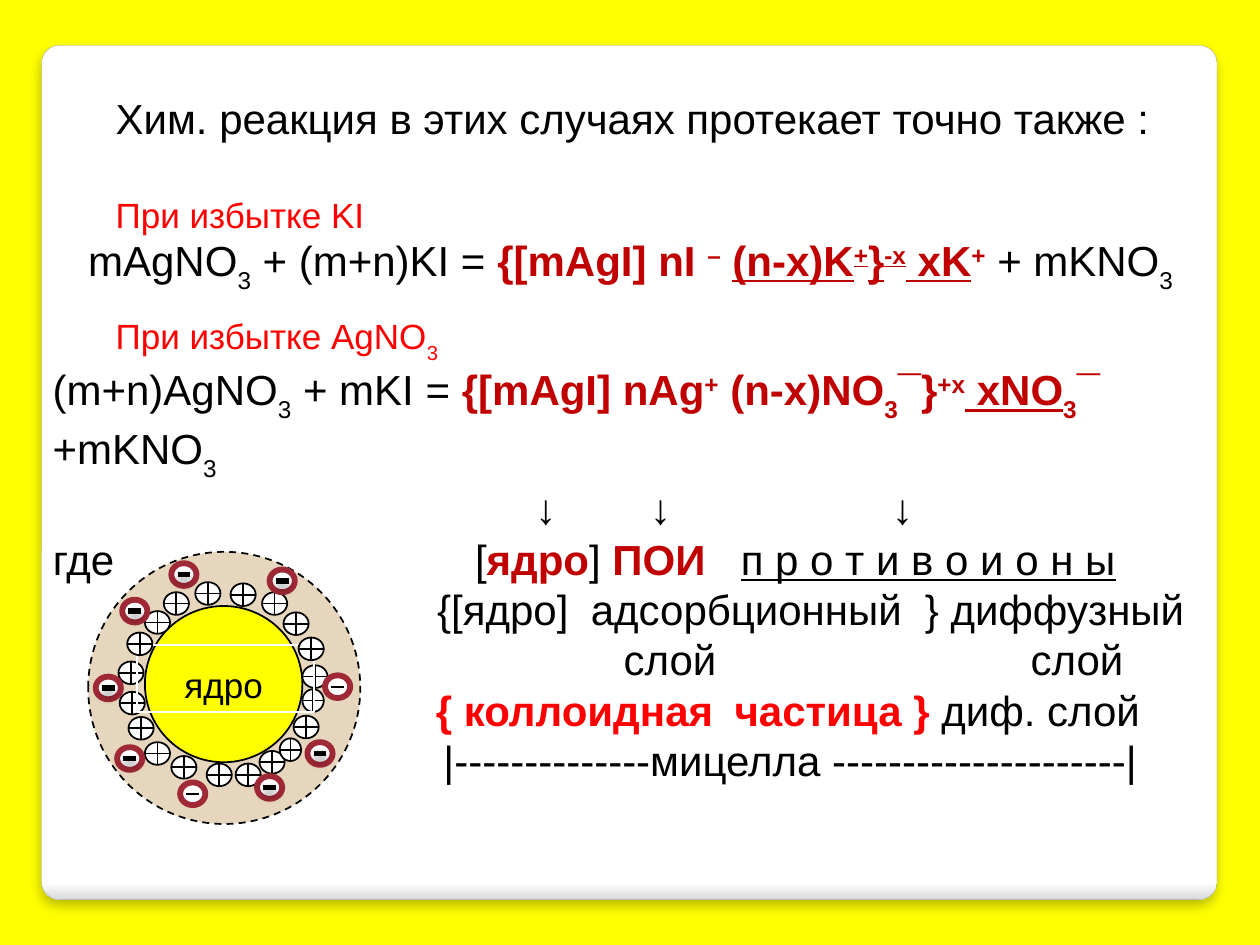
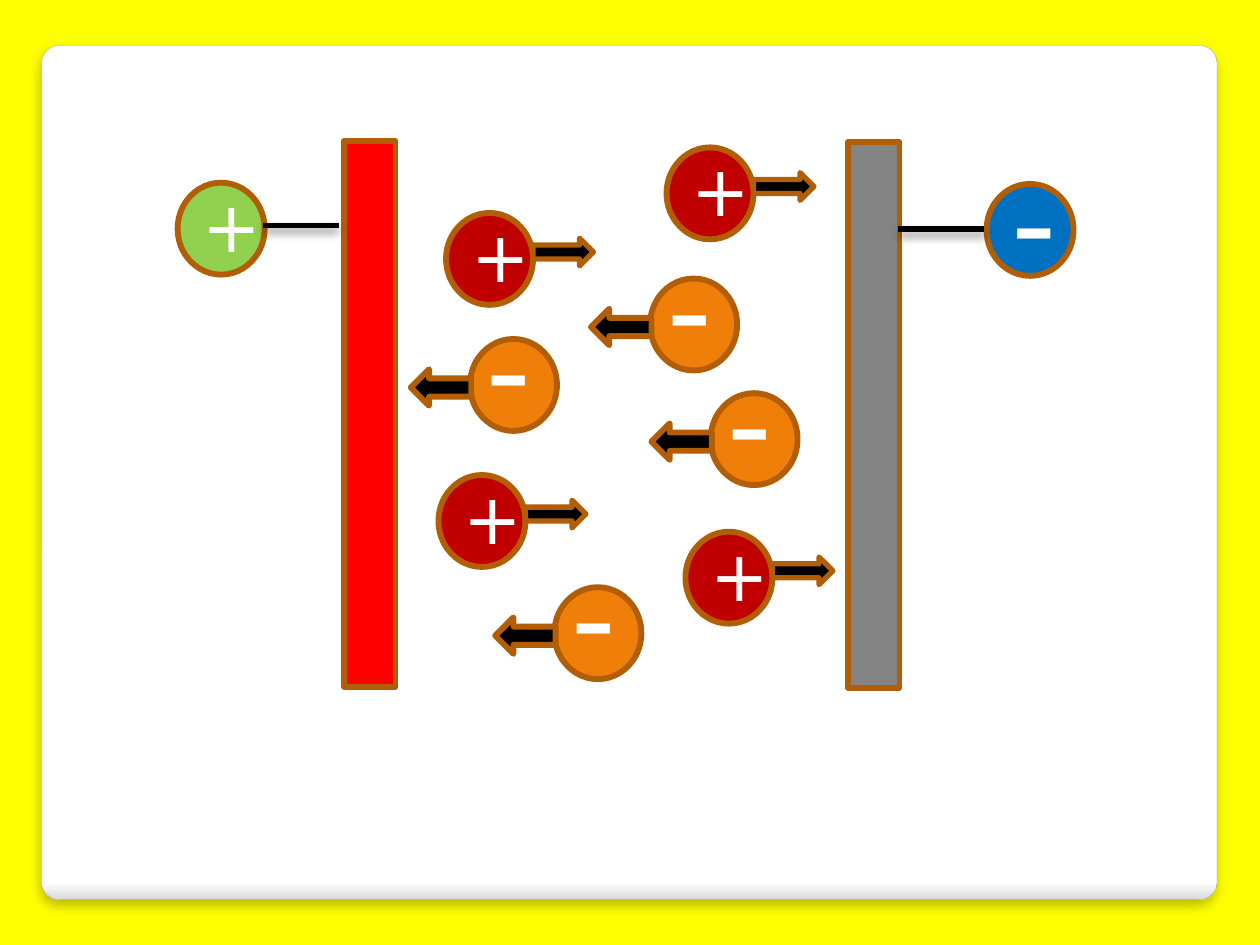
from lxml import etree
from pptx import Presentation
from pptx.dml.color import RGBColor
from pptx.enum.dml import MSO_LINE as Dash
from pptx.enum.shapes import MSO_CONNECTOR as Conn, MSO_SHAPE as Form
from pptx.enum.text import MSO_ANCHOR as Anchor, PP_ALIGN as Align
from pptx.oxml.ns import qn
from pptx.util import Inches, Pt

hue = RGBColor.from_string
RED, WINE, BROWN = "FF0000", "C00000", "B25E07"
BLACK, WHITE, YELLOW = "000000", "FFFFFF", "FFFF00"
SOFT = (25, 6, 4)
DEEP = (40, 5.2, 3)


def say(para, text, size=24, color=BLACK, bold=False, under=False, base=0, font="Arial"):
    run = para.add_run()
    run.text = text
    run.font.name = font
    run.font.size = Pt(size)
    run.font.bold = bold
    run.font.underline = under
    run.font.color.rgb = hue(color)
    if base:
        run._r.get_or_add_rPr().set("baseline", str(base * 1000))


def paint(shape, fill, line, width, shade=None):
    shape.line.color.rgb = hue(line)
    shape.line.width = Pt(width)
    if fill:
        shape.fill.solid()
        shape.fill.fore_color.rgb = hue(fill)
    elif hasattr(shape, "fill"):
        shape.fill.background()
    props = shape._element.spPr
    if hasattr(shape, "shadow"):
        shape.shadow.inherit = False
        effect = props.find(qn("a:effectLst"))
    else:
        effect = etree.SubElement(props, qn("a:effectLst"))
    if shade:
        alpha, blur, dist = shade
        drop = etree.SubElement(effect, qn("a:outerShdw"), blurRad=str(Pt(blur)),
                                dist=str(Pt(dist)), dir="5400000", rotWithShape="0")
        tone = etree.SubElement(drop, qn("a:srgbClr"), val=BLACK)
        etree.SubElement(tone, qn("a:alpha"), val=str(alpha * 1000))
    return shape


deck = Presentation()
deck.slide_width, deck.slide_height = Inches(10), Inches(7.5)
pages = []
for _ in range(2):
    page = deck.slides.add_slide(deck.slide_layouts[6])
    page.background.fill.solid()
    page.background.fill.fore_color.rgb = hue(YELLOW)
    card = page.shapes.add_shape(Form.ROUNDED_RECTANGLE, Inches(0.33), Inches(0.36),
                                 Inches(9.33), Inches(6.78))
    card.adjustments[0] = 0.021
    paint(card, WHITE, "A4A4A4", 0.16, SOFT)
    card.fill.gradient()
    card.fill.gradient_angle = 270
    for stop, (place, tint) in zip(card.fill.gradient_stops, [(0.98, WHITE), (1, "DADADA")]):
        stop.position = place
        stop.color.rgb = hue(tint)
    pages.append(page.shapes)
micelle, cell = pages

SUB = dict(base=-30)
KEY = dict(color=WINE, bold=True)
KEY_SUB = dict(KEY, base=-30)
KEY_SUP = dict(KEY, base=30)
LINK = dict(KEY, under=True)
LINK_SUP = dict(LINK, base=30)
NOTE = dict(color=RED, size=20)
LOUD = dict(color=RED, bold=True)
ROW, LOW = 28.9, 33.7
rows = [
    (ROW, 0, 0.5, Align.LEFT, [("Хим. реакция в этих случаях протекает точно также :", {})]),
    (24.1, ROW, 0.5, Align.LEFT, [("При избытке KI", NOTE)]),
    (LOW, 0, 0, Align.CENTER, [
        ("mAgNO", {}), ("3", SUB), (" + (m+n)KI = ", {}), ("{[mAgI] nI ", KEY),
        ("–", KEY_SUP), (" ", KEY), ("(n-x)K", LINK), ("+", LINK_SUP), ("}", LINK),
        ("-х", LINK_SUP), (" xK", LINK), ("+", KEY_SUP), (" + mKNO", {}), ("3", SUB)]),
    (28.1, 12, 0.5, Align.LEFT, [("При избытке AgNO", NOTE), ("3", dict(NOTE, base=-30))]),
    (LOW, 0, 0, Align.LEFT, [
        ("(m+n)AgNO", {}), ("3", SUB), (" + mKI = ", {}), ("{[mAgI] nAg", KEY),
        ("+", KEY_SUP), (" (n-x)NO", KEY), ("3", KEY_SUB), ("¯}", KEY), ("+х", KEY_SUP),
        (" xNO", LINK), ("3", KEY_SUB), ("¯ ", KEY), ("+mKNO", {}), ("3", SUB)]),
]
box = micelle.add_textbox(Inches(0.32), Inches(0.68), Inches(9.37), Inches(3.2))
frame = box.text_frame
frame.word_wrap = True
for i, (high, gap, dent, side, runs) in enumerate(rows):
    para = frame.add_paragraph() if i else frame.paragraphs[0]
    para.alignment = side
    para.line_spacing = Pt(high)
    para.space_before = Pt(gap)
    props = para._p.get_or_add_pPr()
    props.set("marL", "0")
    props.set("indent", str(Inches(dent)))
    for text, style in runs:
        say(para, text, **style)

scheme = [
    [(x, [("↓", {})]) for x in (4.25, 5.16, 7.08)],
    [(0.42, [("где", {})]),
     (3.77, [("[", {}), ("ядро", KEY), ("] ", {}), ("ПОИ", KEY)]),
     (5.88, [("п р о т и в о и о н ы", dict(under=True))])],
    [(3.47, [("{[ядро]", {})]), (4.69, [("адсорбционный", {})]), (7.34, [("} диффузный", {})])],
    [(x, [("слой", {})]) for x in (4.95, 8.18)],
    [(3.46, [("{ коллоидная", LOUD)]), (5.83, [("частица } ", LOUD), ("диф. слой", {})])],
    [(3.52, [("|--------------мицелла ---------------------|", {})])],
]
for i, labels in enumerate(scheme):
    for x, runs in labels:
        box = micelle.add_textbox(Inches(x), Inches(3.83 + 0.4 * i), Inches(9.59 - x), Inches(0.4))
        frame = box.text_frame
        frame.word_wrap = False
        frame.margin_left = frame.margin_right = frame.margin_top = frame.margin_bottom = 0
        para = frame.paragraphs[0]
        para.alignment = Align.LEFT
        para.line_spacing = Pt(ROW)
        for text, style in runs:
            say(para, text, **style)
        box.width = Inches(0.5 if len(labels) == 3 and i == 0 else 9.59 - x)
        frame.word_wrap = True

disc = micelle.add_shape(Form.OVAL, Inches(0.7), Inches(4.38), Inches(2.16), Inches(2.16))
paint(disc, "E6D6BD", BLACK, 1).line.dash_style = Dash.DASH
core = micelle.add_shape(Form.OVAL, Inches(1.15), Inches(4.81), Inches(1.25), Inches(1.24))
paint(core, YELLOW, BLACK, 1)
core.text_frame.word_wrap = False
core.text_frame.vertical_anchor = Anchor.MIDDLE
core.text_frame.paragraphs[0].alignment = Align.CENTER
say(core.text_frame.paragraphs[0], "ядро", size=20)

under = [(2.4, 5.28), (2.4, 5.47), (0.95, 5.49), (1.15, 4.85), (0.94, 5.25), (1.64, 6.06)]
over = [(2.06, 5.96), (1.15, 5.89), (1.01, 5.02), (1.83, 4.63), (1.36, 6), (2.37, 5.06),
        (1.02, 5.69), (1.55, 4.62), (1.87, 6.06), (2.33, 5.68), (2.25, 4.86),
        (2.22, 5.86), (1.3, 4.7), (2.08, 4.7)]
for spots in (under, over):
    for x, y in spots:
        wide = 0.17 if (x, y) in [(2.4, 5.47), (2.22, 5.86)] else 0.2
        plus = micelle.add_shape(Form.FLOWCHART_OR, Inches(x), Inches(y), Inches(wide), Inches(0.18))
        paint(plus, WHITE, BLACK, 1)
    if spots is under:
        band = micelle.add_shape(Form.RECTANGLE, Inches(1.09), Inches(5.12), Inches(1.4), Inches(0.53))
        paint(band, None, WHITE, 1)

thick = [(1.36, 4.47), (0.93, 5.93), (2.44, 5.89), (2.04, 6.16), (0.97, 4.76), (0.76, 5.37), (2.14, 4.52)]
thin = [(2.58, 5.36), (1.43, 6.21)]
for x, y in thick + thin:
    ring = micelle.add_shape(Form.OVAL, Inches(x), Inches(y), Inches(0.2), Inches(0.18))
    paint(ring, WHITE, "9F2936", 3.35)
    dash = micelle.add_connector(Conn.STRAIGHT, Inches(x + 0.05), Inches(y + 0.09),
                                 Inches(x + 0.15), Inches(y + 0.09))
    if (x, y) in thick:
        paint(dash, None, BLACK, 3.35, DEEP)
    else:
        paint(dash, None, BLACK, 1)

for x, y, color in [(2.73, 1.12, RED), (6.73, 1.13, "848484")]:
    plate = cell.add_shape(Form.RECTANGLE, Inches(x), Inches(y), Inches(0.41), Inches(4.33))
    paint(plate, color, BROWN, 3.35)

ORANGE = "F07F09"
balls = [
    (1.41, 1.45, "+", "92D050"), (7.83, 1.46, "-", "0070C0"),
    (3.54, 1.69, "+", WINE), (5.44, 4.22, "+", WINE), (3.48, 3.77, "+", WINE), (5.29, 1.17, "+", WINE),
    (3.73, 2.69, "-", ORANGE), (4.4, 4.66, "-", ORANGE), (5.16, 2.21, "-", ORANGE), (5.64, 3.12, "-", ORANGE),
]
for x, y, sign, color in balls:
    ball = cell.add_shape(Form.OVAL, Inches(x), Inches(y), Inches(0.69), Inches(0.73))
    paint(ball, color, BROWN, 3.35)
    frame = ball.text_frame
    frame.word_wrap = True
    frame.vertical_anchor = Anchor.MIDDLE
    frame.margin_bottom = Inches(0.12 if sign == "+" else 0.24)
    frame.paragraphs[0].alignment = Align.CENTER
    say(frame.paragraphs[0], sign, size=40 if sign == "+" else 72, color=WHITE, font="DejaVu Sans")
    if color == WINE:
        arrow = cell.add_shape(Form.RIGHT_ARROW, Inches(x + 0.69), Inches(y + 0.2), Inches(0.48), Inches(0.22))
        paint(arrow, BLACK, BROWN, 3)
    elif color == ORANGE:
        arrow = cell.add_shape(Form.RIGHT_ARROW, Inches(x - 0.47), Inches(y + 0.24), Inches(0.48), Inches(0.29))
        paint(arrow, BLACK, BROWN, 3.35)
        ball.rotation = arrow.rotation = 180

for start, end, y in [(2.09, 2.69, 1.79), (7.13, 7.81, 1.82)]:
    wire = cell.add_connector(Conn.STRAIGHT, Inches(start), Inches(y), Inches(end), Inches(y))
    paint(wire, None, BLACK, 3.35, DEEP)

deck.save("out.pptx")
